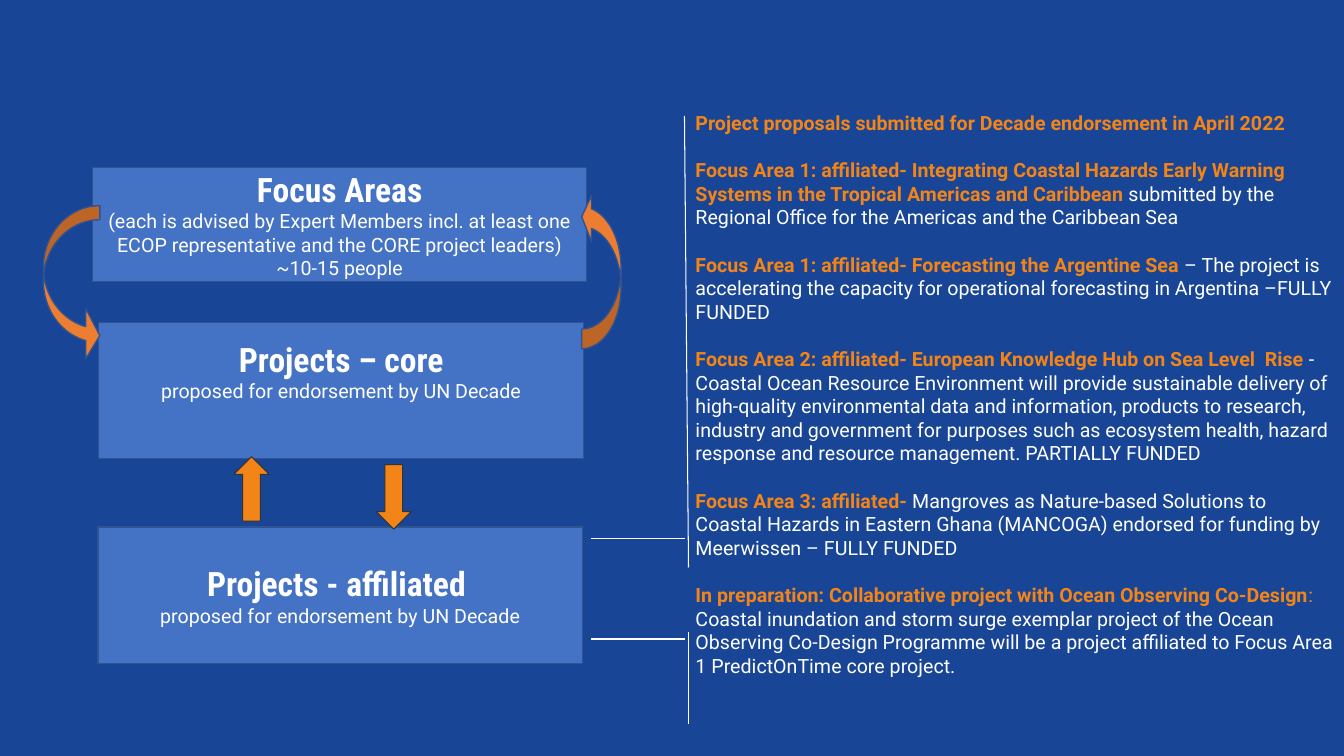
from lxml import etree
from pptx import Presentation
from pptx.dml.color import RGBColor
from pptx.enum.shapes import MSO_CONNECTOR, MSO_SHAPE
from pptx.enum.text import MSO_ANCHOR, PP_ALIGN
from pptx.oxml.ns import qn
from pptx.util import Inches, Pt

RECTANGLE = MSO_SHAPE.RECTANGLE
UP_ARROW = MSO_SHAPE.UP_ARROW
CURVED_ARROW = MSO_SHAPE.CURVED_RIGHT_ARROW
STRAIGHT = MSO_CONNECTOR.STRAIGHT
CENTER = PP_ALIGN.CENTER
MIDDLE = MSO_ANCHOR.MIDDLE

WIDTH, HEIGHT = Inches(13.33), Inches(7.5)
NAVY, BLUE, BLUE_EDGE = "184596", "4472C4", "31538F"
ORANGE, RUST, DARK, WHITE = "F38417", "ED7D31", "333333", "FFFFFF"
BODY_FONT, HEADING_FONT = "Roboto", "Roboto Condensed"

PROPOSED = "proposed for endorsement by UN Decade"

# Heading, lines below it, place, bottom inset in inches
LEVELS = [
    ("Focus Areas",
     ["(each is advised by Expert Members incl. at least one ECOP "
      "representative and the CORE project leaders)", "~10-15 people"],
     (6.9, 22.13, 36.75, 15.07), 0.05),
    ("Projects – core", [PROPOSED], (7.35, 42.67, 36.08, 18), 0.44),
    ("Projects - affiliated ", [PROPOSED], (7.28, 69.73, 36.08, 18), 0.05),
]

# Orange lead, separator in plain orange, white description
PROPOSALS = [
    ("Project proposals submitted for Decade endorsement in April 2022", "", ""),
    ("Focus Area 1: affiliated- Integrating Coastal Hazards Early Warning "
     "Systems in the Tropical Americas and Caribbean ", "",
     "submitted by the Regional Office for the Americas and the Caribbean Sea"),
    ("Focus Area 1: affiliated- Forecasting the Argentine Sea ", "",
     "– The project is accelerating the capacity for operational forecasting "
     "in Argentina –FULLY FUNDED"),
    ("Focus Area 2: affiliated- European Knowledge Hub on Sea Level  Rise ", "",
     "- Coastal Ocean Resource Environment will provide sustainable delivery "
     "of high-quality environmental data and information, products to "
     "research, industry and government for purposes such as ecosystem "
     "health, hazard response and resource management. PARTIALLY FUNDED"),
    ("Focus Area 3: affiliated- ", "",
     "Mangroves as Nature-based Solutions to Coastal Hazards in Eastern Ghana "
     "(MANCOGA) endorsed for funding by Meerwissen – FULLY FUNDED"),
    ("In preparation: Collaborative project with Ocean Observing Co-Design", ":",
     "Coastal inundation and storm surge exemplar project of the Ocean "
     "Observing Co-Design Programme will be a project affiliated to Focus "
     "Area 1 PredictOnTime core project."),
]


def color(code):
    return RGBColor.from_string(code)


def place(left, top, width, height):
    """Turn percentages of the slide into lengths."""
    return (int(WIDTH * left / 100), int(HEIGHT * top / 100),
            int(WIDTH * width / 100), int(HEIGHT * height / 100))


def add_run(paragraph, text, size=14, font=BODY_FONT, ink=WHITE, bold=False):
    run = paragraph.add_run()
    run.text = text
    run.font.size = Pt(size)
    run.font.name = font
    run.font.bold = bold
    run.font.color.rgb = color(ink)


def add_figure(slide, kind, area, fill, edge, edge_width=1.0,
               adjustments=(), rotation=0):
    figure = slide.shapes.add_shape(kind, *place(*area))
    figure.shadow.inherit = False
    figure.fill.solid()
    figure.fill.fore_color.rgb = color(fill)
    figure.line.color.rgb = color(edge)
    figure.line.width = Pt(edge_width)
    figure.rotation = rotation
    for index, value in enumerate(adjustments):
        figure.adjustments[index] = value
    return figure


def add_level(slide, heading, details, area, bottom_inset):
    frame = add_figure(slide, RECTANGLE, area, BLUE, BLUE_EDGE).text_frame
    frame.word_wrap = True
    frame.vertical_anchor = MIDDLE
    frame.margin_bottom = Inches(bottom_inset)
    title = frame.paragraphs[0]
    title.alignment = CENTER
    add_run(title, heading, 24, HEADING_FONT, bold=True)
    for detail in details:
        paragraph = frame.add_paragraph()
        paragraph.alignment = CENTER
        add_run(paragraph, detail)


def add_rule(slide, x1, y1, x2, y2):
    rule = slide.shapes.add_connector(STRAIGHT, *place(x1, y1, x2, y2))
    rule.line.color.rgb = color(WHITE)
    rule.line.width = Pt(0.75)
    etree.SubElement(rule._element.spPr, qn("a:effectLst"))


def add_proposals(slide, area):
    frame = slide.shapes.add_textbox(*place(*area)).text_frame
    frame.word_wrap = True
    frame.margin_left = frame.margin_right = 0
    frame.margin_top = frame.margin_bottom = 0
    for index, (lead, separator, description) in enumerate(PROPOSALS):
        if index:
            paragraph = frame.add_paragraph()
            paragraph.space_before = Pt(17)
        else:
            paragraph = frame.paragraphs[0]
        add_run(paragraph, lead, ink=ORANGE, bold=True)
        if separator:
            add_run(paragraph, separator, ink=ORANGE)
            paragraph.add_line_break()
        if description:
            add_run(paragraph, description)


def main():
    deck = Presentation()
    deck.slide_width, deck.slide_height = WIDTH, HEIGHT
    slide = deck.slides.add_slide(deck.slide_layouts[6])
    slide.background.fill.solid()
    slide.background.fill.fore_color.rgb = color(NAVY)

    # Proposals on the right
    add_proposals(slide, (51.75, 14.67, 47.48, 82))

    # Programme levels on the left
    for level in LEVELS:
        add_level(slide, *level)

    # Loop between focus areas and core projects
    add_figure(slide, CURVED_ARROW, (43.28, 25.6, 2.93, 20.53), RUST, BLUE_EDGE,
               adjustments=(0.5, 1.176, 0.25), rotation=180)
    add_figure(slide, CURVED_ARROW, (3.23, 27.2, 4.2, 20.53), RUST, BLUE_EDGE,
               adjustments=(0.25, 0.895, 0.25))

    # Exchange between core and affiliated projects
    for left, top, rotation in ((17.4, 60.4, 0), (27.98, 61.47, 180)):
        add_figure(slide, UP_ARROW, (left, top, 2.63, 8.53), ORANGE, DARK,
                   0.75, rotation=rotation)

    # Bracket from affiliated projects to the proposals
    for y in (71.2, 84.53):
        add_rule(slide, 43.95, y, 51, y)
    add_rule(slide, 50.93, 15.33, 51.23, 75.07)
    add_rule(slide, 51.23, 83.6, 51.23, 95.73)

    deck.save("out.pptx")


if __name__ == "__main__":
    main()
